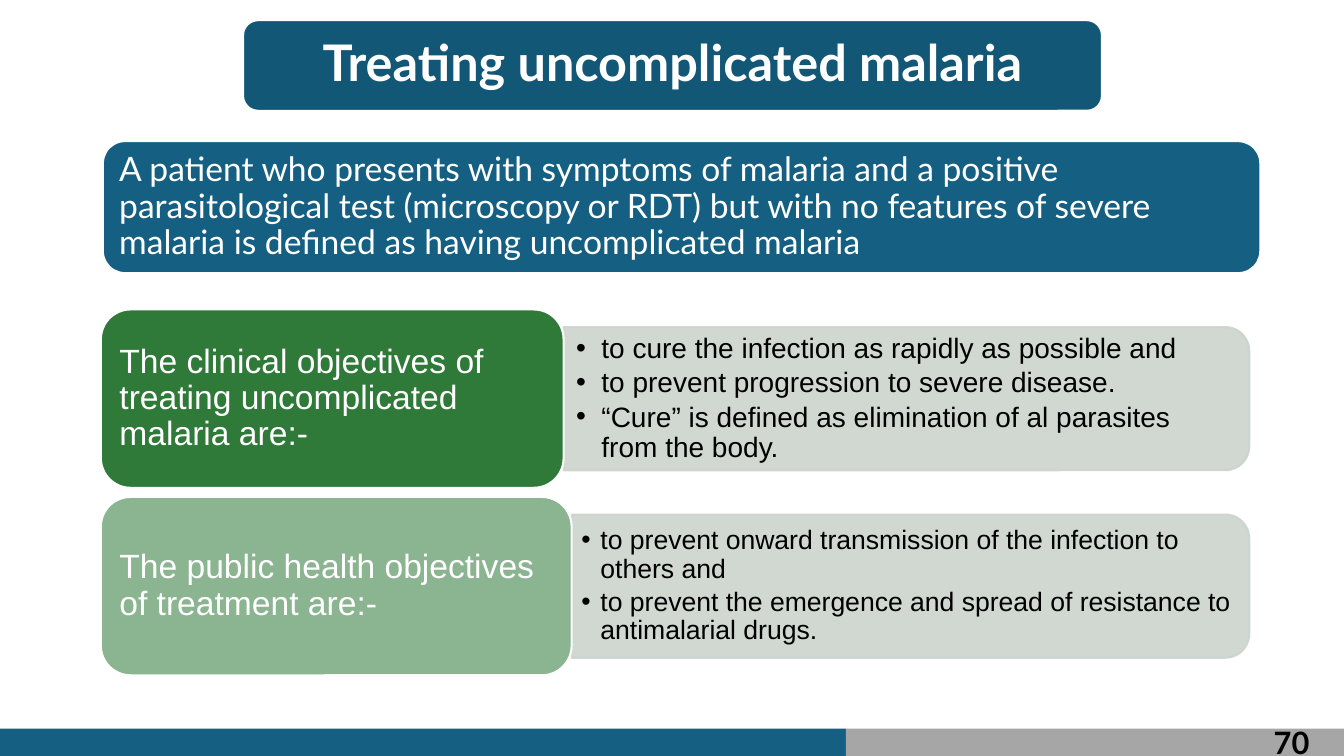
from lxml.etree import SubElement
from pptx import Presentation
from pptx.dml.color import RGBColor
from pptx.enum.shapes import MSO_SHAPE
from pptx.enum.text import MSO_ANCHOR, PP_ALIGN
from pptx.oxml.ns import qn
from pptx.util import Inches, Pt

BLUE, DARK_BLUE, GREEN = "156082", "135776", "196B24"
PANEL, GREY, WHITE, BLACK = "CCD4CD", "A6A6A6", "FFFFFF", "000000"


def paint(fill, color, alpha=100):
    """Make a fill solid, with alpha as percent opacity."""
    fill.solid()
    fill.fore_color.rgb = RGBColor.from_string(color)
    if alpha < 100:
        clr = fill._xPr.find(qn("a:solidFill"))[0]
        SubElement(clr, qn("a:alpha"), val=str(alpha * 1000))


def add_box(slide, kind, box, color, alpha=100, line=None, line_alpha=100):
    sp = slide.shapes.add_shape(kind, *map(Inches, box))
    sp.shadow.inherit = False
    paint(sp.fill, color, alpha)
    if line:
        sp.line.width = Pt(1.5)
        paint(sp.line.fill, line, line_alpha)
    else:
        sp.line.fill.background()
    return sp


def add_bullet(p, indent):
    pPr = p._p.get_or_add_pPr()
    pPr.set("marL", str(Inches(indent)))
    pPr.set("indent", str(-Inches(indent)))
    SubElement(pPr, qn("a:buFont"), typeface="Arial")
    SubElement(pPr, qn("a:buChar"), char="•")


def write(sp, lines, size, font, color, bold=False, align=PP_ALIGN.LEFT,
          anchor=MSO_ANCHOR.MIDDLE, margins=(0.1, 0.05), after=0.35, indent=0):
    """Fill a shape with paragraphs; after is a share of the text size."""
    tf = sp.text_frame
    tf.word_wrap = True
    tf.vertical_anchor = anchor
    tf.margin_left = tf.margin_right = Inches(margins[0])
    tf.margin_top = tf.margin_bottom = Inches(margins[1])
    tf.text = "\n".join(lines)
    for p in tf.paragraphs:
        p.alignment = align
        p.line_spacing = 0.9
        p.space_before = Pt(0)
        p.space_after = Pt(size * after)
        if indent:
            add_bullet(p, indent)
        for r in p.runs:
            r.font.size = Pt(size)
            r.font.name = font
            r.font.bold = bold
            r.font.color.rgb = RGBColor.from_string(color)


def add_title(slide, box, text):
    x, y, w, h = box
    add_box(slide, MSO_SHAPE.ROUNDED_RECTANGLE, box, DARK_BLUE, line=WHITE)
    title = slide.shapes.title
    slide.shapes._spTree.append(title._element)  # bring in front of the plate
    title.left, title.top = Inches(x + 0.04), Inches(y + 0.04)
    title.width, title.height = Inches(w - 0.08), Inches(h - 0.08)
    write(title, [text], 36, "Lato", WHITE, bold=True,
          align=PP_ALIGN.CENTER, margins=(0.15, 0.15))


def add_definition(slide, box, text):
    sp = add_box(slide, MSO_SHAPE.ROUNDED_RECTANGLE, box, BLUE, line=WHITE)
    write(sp, [text], 24, "Lato", WHITE, margins=(0.1, 0.1))


def add_objectives(slide, box, label_w, label, alpha, points, size, indent):
    """Green label on the left, bulleted panel with right corners rounded."""
    x, y, w, h = box
    panel_x, panel_w, panel_h = x + label_w, w - label_w, 1.42
    mid = y + h / 2
    # The panel is turned a quarter, so its frame is set before rotation
    frame = (panel_x + (panel_w - panel_h) / 2, mid - panel_w / 2, panel_h, panel_w)
    panel = add_box(slide, MSO_SHAPE.ROUND_2_SAME_RECTANGLE, frame,
                    PANEL, 90, PANEL, 90)
    panel.rotation = 90
    text_h = panel_h - 0.14
    tb = slide.shapes.add_textbox(Inches(panel_x), Inches(mid - text_h / 2),
                                  Inches(panel_w - 0.07), Inches(text_h))
    write(tb, points, size, "Arial", BLACK, margins=(indent / 2, indent / 4),
          after=0.15, indent=indent)
    sp = add_box(slide, MSO_SHAPE.ROUNDED_RECTANGLE, (x, y, label_w, h),
                 GREEN, alpha, WHITE)
    write(sp, [label], 24, "Arial", WHITE)


def add_footer(slide, box, split, number):
    x, y, w, h = box
    add_box(slide, MSO_SHAPE.RECTANGLE, (x, y, split, h), BLUE)
    add_box(slide, MSO_SHAPE.RECTANGLE, (x + split, y, w - split, h), GREY)
    tb = slide.shapes.add_textbox(Inches(x + w - 1.27), Inches(y - 0.06),
                                  Inches(1.5), Inches(0.59))
    write(tb, [number], 22, "Lato", BLACK, bold=True, align=PP_ALIGN.CENTER,
          anchor=MSO_ANCHOR.TOP, after=0)


def main():
    prs = Presentation()
    prs.slide_width, prs.slide_height = Inches(13.33), Inches(7.5)
    slide = prs.slides.add_slide(prs.slide_layouts[5])
    add_footer(slide, (0, 7.23, 13.33, 0.27), 8.39, "70")
    add_title(slide, (2.41, 0.2, 8.52, 0.9), "Treating uncomplicated malaria")
    add_objectives(
        slide, (1, 3.07, 11.39, 1.77), 4.59,
        "The clinical objectives of treating uncomplicated malaria are:-", 90,
        ["to cure the infection as rapidly as possible and",
         "to prevent progression to severe disease.",
         "“Cure” is defined as elimination of al parasites from the body."],
        20, 0.25)
    add_objectives(
        slide, (1, 4.93, 11.39, 1.77), 4.67,
        "The public health objectives of treatment are:-", 50,
        ["to prevent onward transmission of the infection to others and",
         "to prevent the emergence and spread of resistance to antimalarial drugs."],
        19, 0.19)
    add_definition(
        slide, (1.02, 1.4, 11.48, 1.31),
        "A patient who presents with symptoms of malaria and a positive "
        "parasitological test (microscopy or RDT) but with no features of severe "
        "malaria is defined as having uncomplicated malaria")
    prs.save("out.pptx")


if __name__ == "__main__":
    main()
